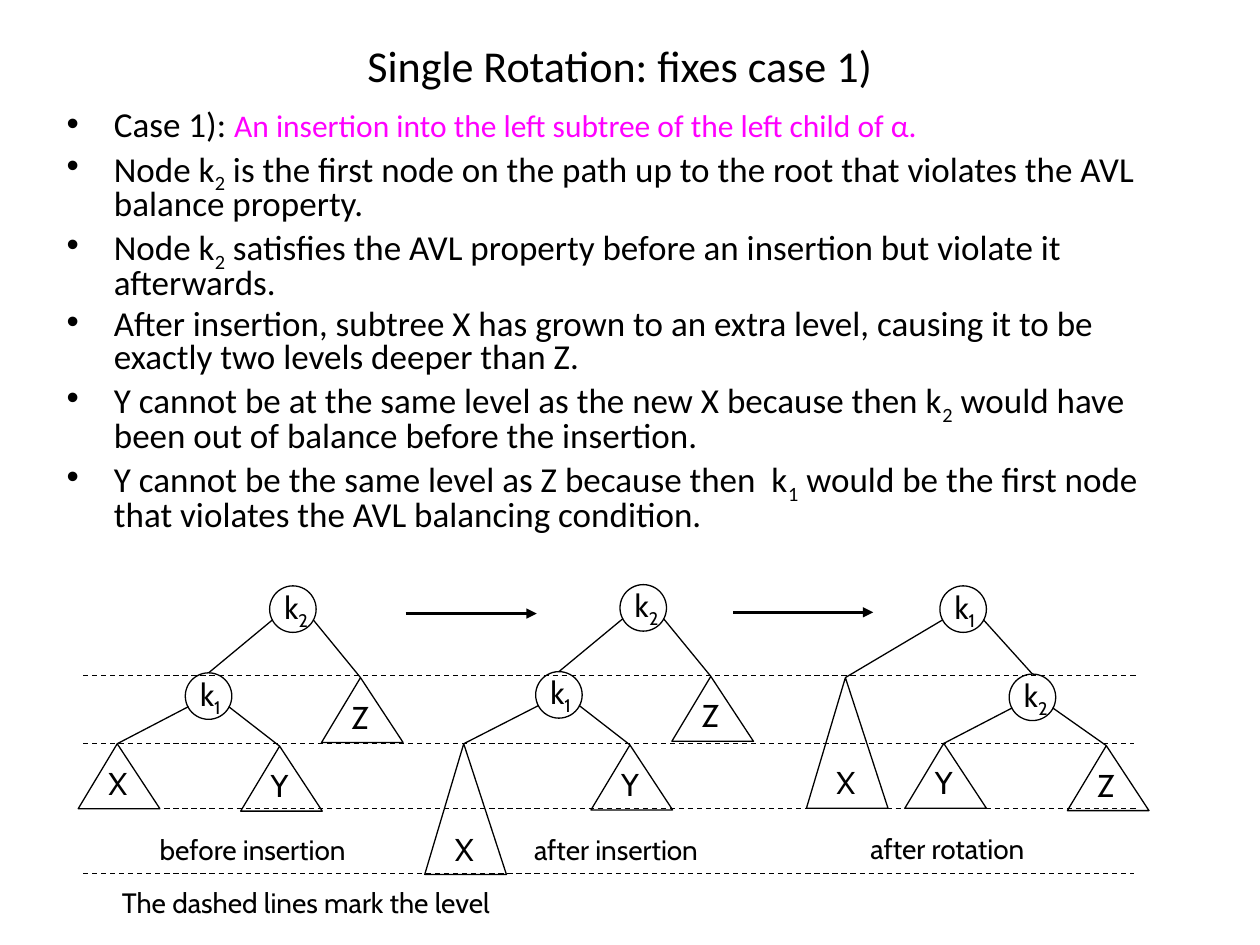
import dataclasses

import pptx
import pptx.dml.color
import pptx.enum.dml
import pptx.enum.shapes
import pptx.enum.text
import pptx.oxml
import pptx.oxml.ns
import pptx.util
from lxml import etree

Pt = pptx.util.Pt
qn = pptx.oxml.ns.qn


@dataclasses.dataclass(frozen=True)
class Theme:
    ink: str = "000000"
    accent: str = "FF00FF"
    text_font: str = "Calibri"
    diagram_font: str = "Cabin"
    title_size: float = 25.2
    body_size: float = 20
    note_size: float = 18
    label_size: float = 18
    caption_size: float = 16
    thin: float = 0.75
    thick: float = 1.5


THEME = Theme()


def write(para, text, size, font, color=THEME.ink):
    """Add text to a paragraph; the character after each underscore is a subscript."""
    first, *others = text.split("_")
    pieces = [(first, False)]
    for piece in others:
        pieces += [(piece[0], True), (piece[1:], False)]
    for words, subscript in pieces:
        if not words:
            continue
        span = para.add_run()
        span.text = words
        span.font.size = Pt(size)
        span.font.name = font
        span.font.color.rgb = pptx.dml.color.RGBColor.from_string(color)
        if subscript:
            span._r.get_or_add_rPr().set("baseline", "-25000")


class SlideWriter:
    """Draws in the current container: the slide or one of its groups."""

    radius = 13.3

    def __init__(self, page, theme):
        self.page = page
        self.theme = theme
        self.shapes = page.shapes

    def open_group(self):
        self.shapes = self.page.shapes.add_group_shape().shapes

    def close_group(self):
        self.shapes = self.page.shapes

    def outline(self, shape):
        shape.shadow.inherit = False
        shape.fill.background()
        self.stroke(shape.line, self.theme.thin)

    def stroke(self, line, width):
        line.color.rgb = pptx.dml.color.RGBColor.from_string(self.theme.ink)
        line.width = Pt(width)

    def title(self, text, left, top, width, height):
        box = self.page.shapes.title
        box.left, box.top, box.width, box.height = map(Pt, (left, top, width, height))
        frame = box.text_frame
        frame.auto_size = pptx.enum.text.MSO_AUTO_SIZE.NONE
        frame.vertical_anchor = pptx.enum.text.MSO_ANCHOR.MIDDLE
        para = frame.paragraphs[0]
        para.alignment = pptx.enum.text.PP_ALIGN.CENTER
        write(para, text, self.theme.title_size, self.theme.text_font)

    def bullets(self, items, left, top, width, height):
        """Each item is a list of (text, size, colour) parts."""
        frame = self.shapes.add_textbox(*map(Pt, (left, top, width, height))).text_frame
        frame.word_wrap = True
        for index, parts in enumerate(items):
            para = frame.add_paragraph() if index else frame.paragraphs[0]
            para.line_spacing = 0.8
            para.space_before = Pt(4)
            properties = para._p.get_or_add_pPr()
            properties.set("marL", str(Pt(27)))
            properties.set("indent", str(Pt(-27)))
            etree.SubElement(properties, qn("a:buFont")).set("typeface", "Arial")
            etree.SubElement(properties, qn("a:buChar")).set("char", "•")
            for text, size, color in parts:
                write(para, text, size, self.theme.text_font, color)

    def label(self, text, left, top, width, height, size):
        frame = self.shapes.add_textbox(*map(Pt, (left, top, width, height))).text_frame
        frame.word_wrap = False
        frame.auto_size = pptx.enum.text.MSO_AUTO_SIZE.SHAPE_TO_FIT_TEXT
        write(frame.paragraphs[0], text, size, self.theme.diagram_font)

    def line(self, start, end, dashed=False, arrow=False):
        connector = self.shapes.add_connector(
            pptx.enum.shapes.MSO_CONNECTOR.STRAIGHT, *map(Pt, (*start, *end)))
        self.stroke(connector.line, self.theme.thick if arrow else self.theme.thin)
        if dashed:
            connector.line.dash_style = pptx.enum.dml.MSO_LINE.DASH
        properties = connector._element.spPr
        if arrow:
            tail = etree.SubElement(properties.find(qn("a:ln")), qn("a:tailEnd"))
            tail.set("type", "triangle")
        etree.SubElement(properties, qn("a:effectLst"))

    def node(self, text, center):
        x, y = center
        circle = self.shapes.add_shape(
            pptx.enum.shapes.MSO_SHAPE.OVAL,
            Pt(x - self.radius), Pt(y - self.radius),
            Pt(2 * self.radius), Pt(2 * self.radius))
        self.outline(circle)
        self.label(text, x - 12, y - 15.8, 30.2, 28.8, self.theme.label_size)

    def subtree(self, text, apex, height):
        x, y = apex
        builder = self.shapes.build_freeform(Pt(x), Pt(y))
        base = [(x - 22.3, y + height), (x + 24.4, y + height)]
        builder.add_line_segments([(Pt(a), Pt(b)) for a, b in base], close=True)
        self.outline(builder.convert_to_shape())
        self.label(text, x - 12.2, y + height - 29.2, 25.2, 28.8, self.theme.label_size)

    def edge(self, parent, end):
        """Join the lower side of a parent node to the top of its child."""
        x, y = parent
        side = 1 if end[0] > x else -1
        self.line((x + side * 11.5, y + 6), end)

    def tree(self, nodes, subtrees, edges):
        """Edges name a parent node and a child, which is a node or a subtree."""
        self.open_group()
        tops = {name: (x, y - self.radius) for name, (x, y) in nodes.items()}
        for name, center in nodes.items():
            self.node(name, center)
        for name, (apex, height) in subtrees.items():
            tops[name] = apex
            self.subtree(name, apex, height)
        for parent, child in edges:
            self.edge(nodes[parent], tops[child])
        self.close_group()


def main():
    deck = pptx.Presentation()
    deck.slide_width, deck.slide_height = Pt(720), Pt(540)
    page = deck.slides.add_slide(deck.slide_layouts.get_by_name("Title Only"))
    writer = SlideWriter(page, THEME)

    writer.title("Single Rotation: fixes case 1)", 48.2, 23.8, 612, 26.6)
    case = [("Case 1): ", THEME.body_size, THEME.ink),
            ("An insertion into the left subtree of the left child of α.",
             THEME.note_size, THEME.accent)]
    statements = [
        "Node k_2 is the first node on the path up to the root that violates the AVL balance property.",
        "Node k_2 satisfies the AVL property before an insertion but violate it afterwards.",
        "After insertion, subtree X has grown to an extra level, causing it to be exactly two levels deeper than Z.",
        "Y cannot be at the same level as the new X because then k_2 would have been out of balance before the insertion.",
        "Y cannot be the same level as Z because then  k_1 would be the first node that violates the AVL balancing condition.",
    ]
    items = [case] + [[(text, THEME.body_size, THEME.ink)] for text in statements]
    writer.bullets(items, 31, 59.8, 659.5, 258.5)

    for level, right in [(385.9, 650), (424.8, 648), (462.2, 650), (499, 648)]:
        writer.line((47.5, level), (right, level), dashed=True)

    short, tall = 37.1, 74.7
    unbalanced = [("k_2", "k_1"), ("k_2", "Z"), ("k_1", "X"), ("k_1", "Y")]
    rotated = [("k_1", "X"), ("k_1", "k_2"), ("k_2", "Y"), ("k_2", "Z")]
    writer.tree({"k_2": (167.4, 348.1), "k_1": (119.2, 397.8)},
                {"X": ((67, 425), short), "Y": ((159.8, 426.4), short),
                 "Z": ((206, 387.2), short)}, unbalanced)
    writer.tree({"k_2": (367.6, 347.4), "k_1": (319.4, 397.1)},
                {"X": ((265, 425), tall), "Y": ((360, 425.7), short),
                 "Z": ((406.2, 386.5), short)}, unbalanced)
    writer.tree({"k_1": (550.4, 348.1), "k_2": (590, 398.5)},
                {"X": ((483.1, 387.2), tall), "Y": ((539.3, 424.8), short),
                 "Z": ((632.2, 426.1), short)}, rotated)

    writer.line((231.8, 350.6), (306.7, 350.6), arrow=True)
    writer.line((419, 349.9), (499, 349.9), arrow=True)

    captions = [
        ("The dashed lines mark the level", 62.6, 502.6, 238.3),
        ("before insertion", 84.2, 472.3, 125.3),
        ("after insertion", 298.1, 472.3, 113),
        ("after rotation", 490.3, 471.6, 107.3),
    ]
    for text, left, top, width in captions:
        writer.label(text, left, top, width, 26.6, THEME.caption_size)

    deck.save("out.pptx")


if __name__ == "__main__":
    main()
